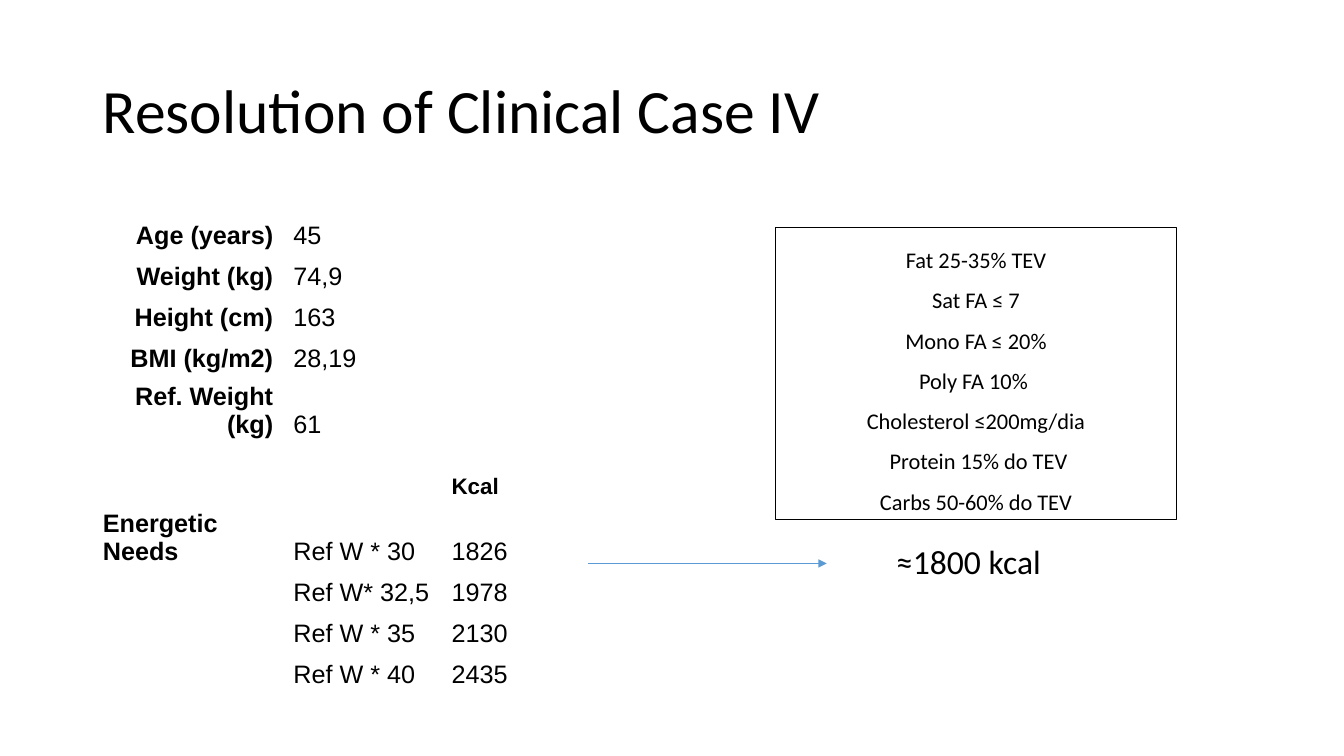
from pptx import Presentation
from pptx import util as u
from pptx.dml import color
from pptx.enum import shapes, text
from pptx.oxml import ns
from lxml import etree

HUES = {"ink": "000000", "arrow": "5B9BD5"}
COLS = (1.89, 1.57, 3.31)
ROWS = (
    (1.15, "Age (years)", "45", ""),
    (0.38, "Weight (kg)", "74,9", ""),
    (0.38, "Height (cm)", "163", ""),
    (0.38, "BMI (kg/m2)", "28,19", ""),
    (0.66, "Ref. Weight (kg)", "61", ""),
    (0.6, "", "", "Kcal"),
    (0.66, "Energetic Needs", "Ref W * 30", "1826"),
    (0.38, "", "Ref W* 32,5", "1978"),
    (0.38, "", "Ref W * 35", "2130"),
    (0.38, "", "Ref W * 40", "2435"),
)
GOALS = (
    "Fat 25-35% TEV\vSat FA ≤ 7\n"
    "Mono FA ≤ 20%\vPoly FA 10% \n"
    "Cholesterol ≤200mg/dia\n"
    " Protein 15% do TEV\n"
    "Carbs 50-60% do TEV"
)


def hue(name):
    """Return the named colour."""
    return color.RGBColor.from_string(HUES[name])


def place(item, left, top, width, height):
    """Move and size a shape in inches."""
    item.left, item.top = u.Inches(left), u.Inches(top)
    item.width, item.height = u.Inches(width), u.Inches(height)


def style(frame, size, align, face="Calibri", bold=False, space=None):
    """Format every paragraph and run of a text frame."""
    for para in frame.paragraphs:
        para.alignment = align
        if space:
            para.line_spacing = space
        for run in para.runs:
            font = run.font
            font.name, font.size, font.bold = face, u.Pt(size), bold
            font.color.rgb = hue("ink")


def add_title(slide, words):
    """Fill the title placeholder."""
    title = slide.shapes.title
    place(title, 0.92, 0.4, 11.5, 1.45)
    frame = title.text_frame
    frame.text = words
    frame.vertical_anchor = text.MSO_ANCHOR.MIDDLE
    style(frame, 44, text.PP_ALIGN.LEFT, space=0.9)


def add_grid(slide):
    """Add the table of patient data and energy needs."""
    grid = slide.shapes.add_table(
        len(ROWS), len(COLS), u.Inches(0.92), u.Inches(1.38),
        u.Inches(sum(COLS)), u.Inches(sum(row[0] for row in ROWS))).table
    grid.first_row = grid.horz_banding = False
    for col, width in zip(grid.columns, COLS):
        col.width = u.Inches(width)
    for r, (height, *words) in enumerate(ROWS):
        grid.rows[r].height = u.Inches(height)
        for c, word in enumerate(words):
            cell = grid.cell(r, c)
            cell.fill.background()
            cell.vertical_anchor = text.MSO_ANCHOR.BOTTOM
            cell.text_frame.text = word
            right = c == 0 and r < 5
            align = text.PP_ALIGN.RIGHT if right else text.PP_ALIGN.LEFT
            head = word == "Kcal"
            style(cell.text_frame, 16 if head else 18, align, "Arial", c == 0 or head)


def add_goals(slide):
    """Add the framed list of nutrient goals."""
    box = slide.shapes.add_shape(
        shapes.MSO_SHAPE.RECTANGLE, u.Inches(7.69), u.Inches(2.26),
        u.Inches(3.98), u.Inches(2.89))
    box.shadow.inherit = False
    box.fill.background()
    box.line.color.rgb = hue("ink")
    box.line.width = u.Pt(0.75)
    frame = box.text_frame
    frame.text = GOALS
    frame.word_wrap = True
    frame.auto_size = text.MSO_AUTO_SIZE.SHAPE_TO_FIT_TEXT
    frame.vertical_anchor = text.MSO_ANCHOR.TOP
    style(frame, 16, text.PP_ALIGN.CENTER, space=1.5)


def add_arrow(slide, start, end, level):
    """Add a level arrow pointing right."""
    line = slide.shapes.add_connector(
        shapes.MSO_CONNECTOR.STRAIGHT, u.Inches(start), u.Inches(level),
        u.Inches(end), u.Inches(level))
    line.line.color.rgb = hue("arrow")
    line.line.width = u.Pt(0.5)
    etree.SubElement(line.line._get_or_add_ln(), ns.qn("a:tailEnd"), type="triangle")
    etree.SubElement(line._element.spPr, ns.qn("a:effectLst"))


def add_note(slide, words):
    """Add the text with the chosen energy intake."""
    note = slide.shapes.add_textbox(
        u.Inches(8.79), u.Inches(5.32), u.Inches(2.21), u.Inches(0.5))
    frame = note.text_frame
    frame.word_wrap = True
    frame.auto_size = text.MSO_AUTO_SIZE.SHAPE_TO_FIT_TEXT
    frame.text = words
    style(frame, 24, text.PP_ALIGN.LEFT)


def main():
    """Build and save the slide."""
    deck = Presentation()
    deck.slide_width, deck.slide_height = u.Inches(13.33), u.Inches(7.5)
    slide = deck.slides.add_slide(deck.slide_layouts[5])
    add_title(slide, "Resolution of Clinical Case IV")
    add_grid(slide)
    add_goals(slide)
    add_arrow(slide, 5.83, 8.2, 5.59)
    add_note(slide, "≈1800 kcal")
    deck.save("out.pptx")


if __name__ == "__main__":
    main()
